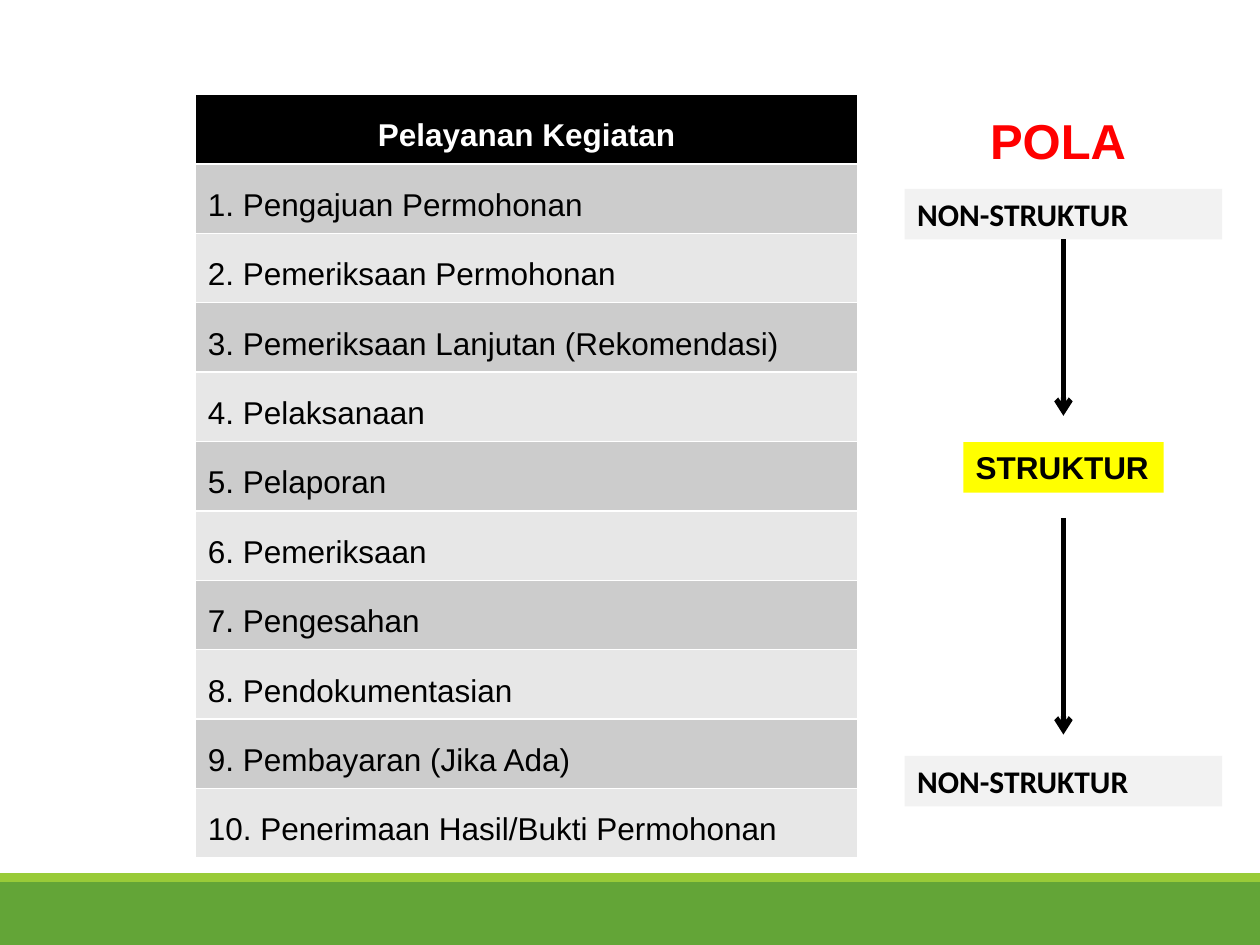
from lxml.etree import SubElement
from pptx import Presentation
from pptx.dml.color import RGBColor
from pptx.enum.shapes import MSO_CONNECTOR, MSO_SHAPE
from pptx.enum.text import MSO_ANCHOR, MSO_AUTO_SIZE, PP_ALIGN
from pptx.oxml.ns import qn
from pptx.util import Inches, Pt

COLORS = {
    "black": "000000", "white": "FFFFFF", "red": "FF0000", "yellow": "FFFF00",
    "pale": "F2F2F2", "dark row": "CCCCCC", "light row": "E7E7E7",
    "green": "63A537", "lime": "99CB38",
}
HEADER = "Pelayanan Kegiatan"
ACTIVITIES = [
    "Pengajuan Permohonan", "Pemeriksaan Permohonan",
    "Pemeriksaan Lanjutan (Rekomendasi)", "Pelaksanaan", "Pelaporan",
    "Pemeriksaan", "Pengesahan", "Pendokumentasian",
    "Pembayaran (Jika Ada)", "Penerimaan Hasil/Bukti Permohonan",
]
BANDS = [("green", 7, 0.5), ("lime", 6.93, 0.07)]
CENTER = 8.44
STAGES = [
    ("NON-STRUKTUR", "pale", "Calibri", 1.5, 2.52, True),
    ("STRUKTUR", "yellow", "Arial", 3.51, 1.59, False),
    ("NON-STRUKTUR", "pale", "Calibri", 6, 2.52, True),
]
ARROWS = [(1.9, 3.3), (4.11, 5.83)]
TABLE_LEFT, TABLE_TOP, TABLE_WIDTH, TABLE_HEIGHT = 1.55, 0.75, 5.26, 6.06


def color(name):
    return RGBColor.from_string(COLORS[name])


def set_font(paragraph, name, size, color_name, bold):
    font = paragraph.font
    font.name, font.size, font.bold = name, Pt(size), bold
    font.color.rgb = color(color_name)


def add_rectangle(page, left, top, width, height, fill):
    box = page.shapes.add_shape(
        MSO_SHAPE.RECTANGLE, Inches(left), Inches(top), Inches(width), Inches(height))
    box.shadow.inherit = False
    box.fill.solid()
    box.fill.fore_color.rgb = color(fill)
    box.line.fill.background()
    return box


def write_label(box, text, font, size, color_name, wrap):
    frame = box.text_frame
    frame.word_wrap = wrap
    frame.auto_size = MSO_AUTO_SIZE.SHAPE_TO_FIT_TEXT
    frame.vertical_anchor = MSO_ANCHOR.TOP
    paragraph = frame.paragraphs[0]
    paragraph.text = text
    paragraph.alignment = PP_ALIGN.LEFT
    set_font(paragraph, font, size, color_name, True)


def add_activity_table(page):
    rows = [HEADER] + [f"{number}. {name}" for number, name in enumerate(ACTIVITIES, 1)]
    table = page.shapes.add_table(
        len(rows), 1, Inches(TABLE_LEFT), Inches(TABLE_TOP),
        Inches(TABLE_WIDTH), Inches(TABLE_HEIGHT)).table
    for index, text in enumerate(rows):
        is_header = index == 0
        fill = "black" if is_header else "dark row" if index % 2 else "light row"
        cell = table.cell(index, 0)
        cell.fill.solid()
        cell.fill.fore_color.rgb = color(fill)
        paragraph = cell.text_frame.paragraphs[0]
        paragraph.text = text
        paragraph.alignment = PP_ALIGN.CENTER if is_header else PP_ALIGN.LEFT
        paragraph.line_spacing = 1.5
        paragraph.space_before = paragraph.space_after = Pt(6)
        set_font(paragraph, "Arial", 18, "white" if is_header else "black", is_header)


def add_arrow(page, top, bottom):
    arrow = page.shapes.add_connector(
        MSO_CONNECTOR.STRAIGHT, Inches(CENTER), Inches(top), Inches(CENTER), Inches(bottom))
    arrow.line.color.rgb = color("black")
    arrow.line.width = Pt(3)
    SubElement(arrow.line._get_or_add_ln(), qn("a:tailEnd"), type="arrow")
    SubElement(arrow._element.spPr, qn("a:effectLst"))
    return arrow


def main():
    deck = Presentation()
    deck.slide_width, deck.slide_height = Inches(10), Inches(7.5)
    page = deck.slides.add_slide(deck.slide_layouts[6])

    for fill, top, height in BANDS:
        add_rectangle(page, 0, top, 10, height, fill)
    add_activity_table(page)

    heading = page.shapes.add_textbox(Inches(7.76), Inches(0.83), Inches(1.29), Inches(0.57))
    write_label(heading, "POLA", "Arial", 28, "red", False)

    stages = []
    for text, fill, font, top, width, wrap in STAGES:
        box = add_rectangle(page, CENTER - width / 2, top, width, 0.4, fill)
        write_label(box, text, font, 18, "black", wrap)
        stages.append(box)

    arrows = [add_arrow(page, top, bottom) for top, bottom in ARROWS]
    arrows[0].begin_connect(stages[0], 2)

    deck.save("out.pptx")


if __name__ == "__main__":
    main()
